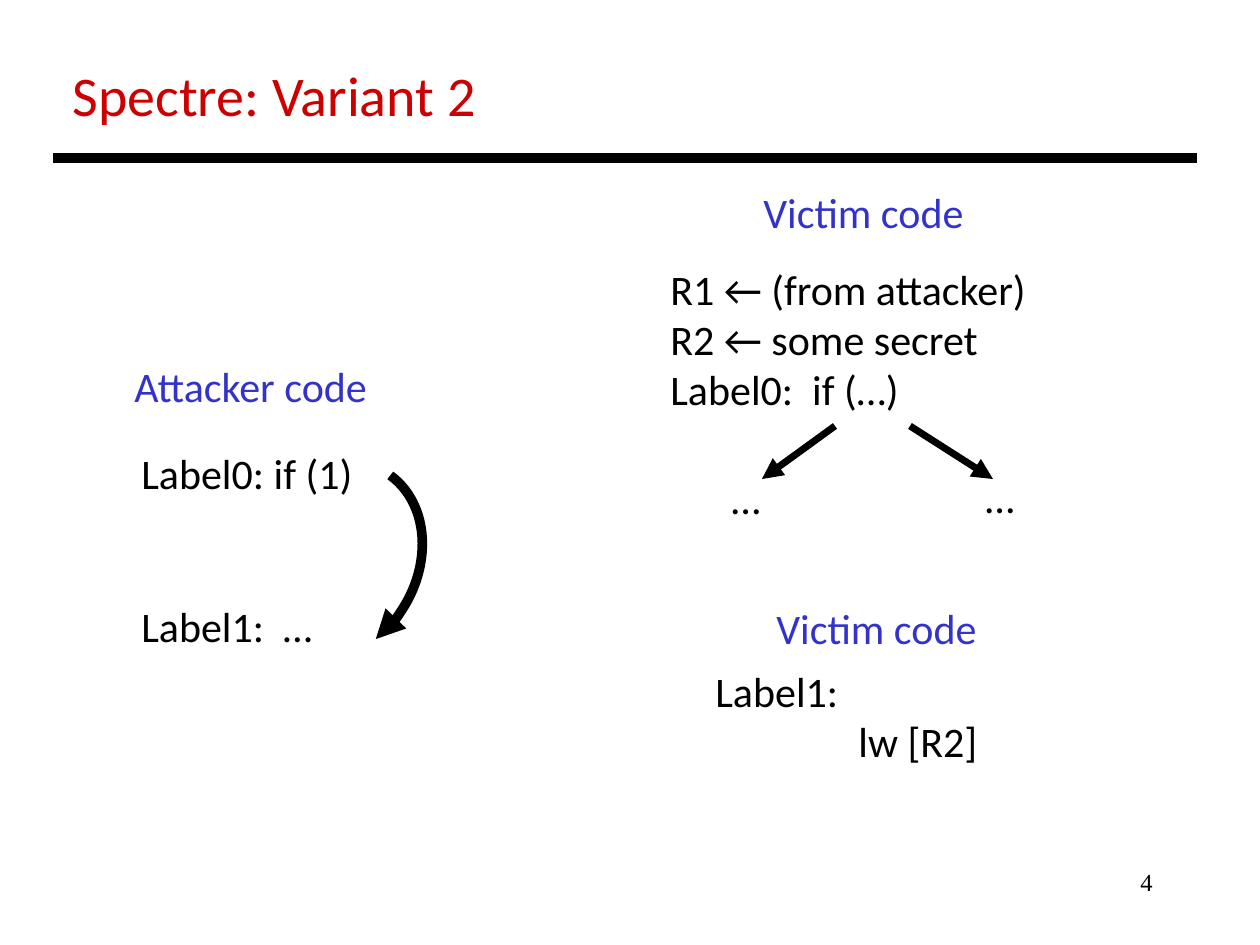
from lxml import etree
from pptx import Presentation
from pptx.dml.color import RGBColor
from pptx.enum.shapes import MSO_CONNECTOR, MSO_SHAPE
from pptx.enum.text import PP_ALIGN
from pptx.oxml.ns import qn
from pptx.util import Emu, Pt

STRAIGHT = MSO_CONNECTOR.STRAIGHT
ARC = MSO_SHAPE.ARC
LEFT, RIGHT = PP_ALIGN.LEFT, PP_ALIGN.RIGHT

SCALE = 914400 / 126
THEME = {
    "title": ("Calibri", 32, RGBColor(0xCC, 0x00, 0x00)),
    "heading": ("Calibri", 24, RGBColor(0x33, 0x33, 0xCC)),
    "code": ("Calibri", 24, RGBColor(0x00, 0x00, 0x00)),
    "number": ("Times New Roman", 14, RGBColor(0x00, 0x00, 0x00)),
    "line": RGBColor(0x00, 0x00, 0x00),
}


def add_text(box, text, style, align=LEFT):
    """Add a text box in a theme style and return its paragraphs."""
    shape = slide.shapes.add_textbox(*(Emu(round(px * SCALE)) for px in box))
    text_frame = shape.text_frame
    text_frame.word_wrap = False
    text_frame.text = text
    font_name, size, color = THEME[style]
    for paragraph in text_frame.paragraphs:
        paragraph.alignment = align
        for run in paragraph.runs:
            run.font.name = font_name
            run.font.size = Pt(size)
            run.font.color.rgb = color
    return text_frame.paragraphs


def style_line(shape, width, arrow=True):
    """Set colour and width, clear the shadow, and add an end arrowhead."""
    shape.line.color.rgb = THEME["line"]
    shape.line.width = Pt(width)
    if arrow:
        outline = shape.line._get_or_add_ln()
        etree.SubElement(outline, qn("a:tailEnd"), type="triangle")
    properties = shape._element.spPr
    if properties.find(qn("a:effectLst")) is None:
        etree.SubElement(properties, qn("a:effectLst"))


presentation = Presentation()
presentation.slide_width = Emu(round(1260 * SCALE))
presentation.slide_height = Emu(round(945 * SCALE))
slide = presentation.slides.add_slide(presentation.slide_layouts[6])

# Title, page number and headings
add_text((903, 861, 262, 63), "4", "number", RIGHT)
add_text((60, 54, 433, 81), "Spectre: Variant 2", "title")
for left, top, width, heading in [
    (751, 180, 237, "Victim code"),
    (764, 596, 237, "Victim code"),
    (122, 354, 271, "Attacker code"),
]:
    add_text((left, top, width, 63), heading, "heading")

# Code blocks
add_text(
    (658, 257, 388, 165),
    "R1 ← (from attacker)\nR2 ← some secret\nLabel0:  if (…)",
    "code",
)
for left, top in [(719, 466), (973, 465)]:
    add_text((left, top, 64, 63), "…", "code")

victim_lines = add_text((703, 659, 287, 115), "Label1:\nlw [R2]", "code")
victim_lines[1]._p.get_or_add_pPr().set("marL", str(round(143 * SCALE)))

attacker_lines = add_text((129, 441, 238, 217), "Label0: if (1)\nLabel1:  …", "code")
attacker_lines[1].space_before = Pt(58.6)

# Title rule and branch arrows
for *ends, width, arrow in [
    (53, 158, 1197, 158, 6, False),
    (835, 426, 762, 479, 4, True),
    (910, 426, 993, 479, 4, True),
]:
    connector = slide.shapes.add_connector(
        STRAIGHT, *(Emu(round(px * SCALE)) for px in ends)
    )
    style_line(connector, width, arrow)

# Curved jump from Label0 to Label1
jump = slide.shapes.add_shape(
    ARC, *(Emu(round(px * SCALE)) for px in (242, 456, 174, 213))
)
jump.adjustments[0] = 163.09
jump.adjustments[1] = 15.18
jump.rotation = 33.3
jump.fill.background()
jump.shadow.inherit = False
style_line(jump, 5.5)

presentation.save("out.pptx")
